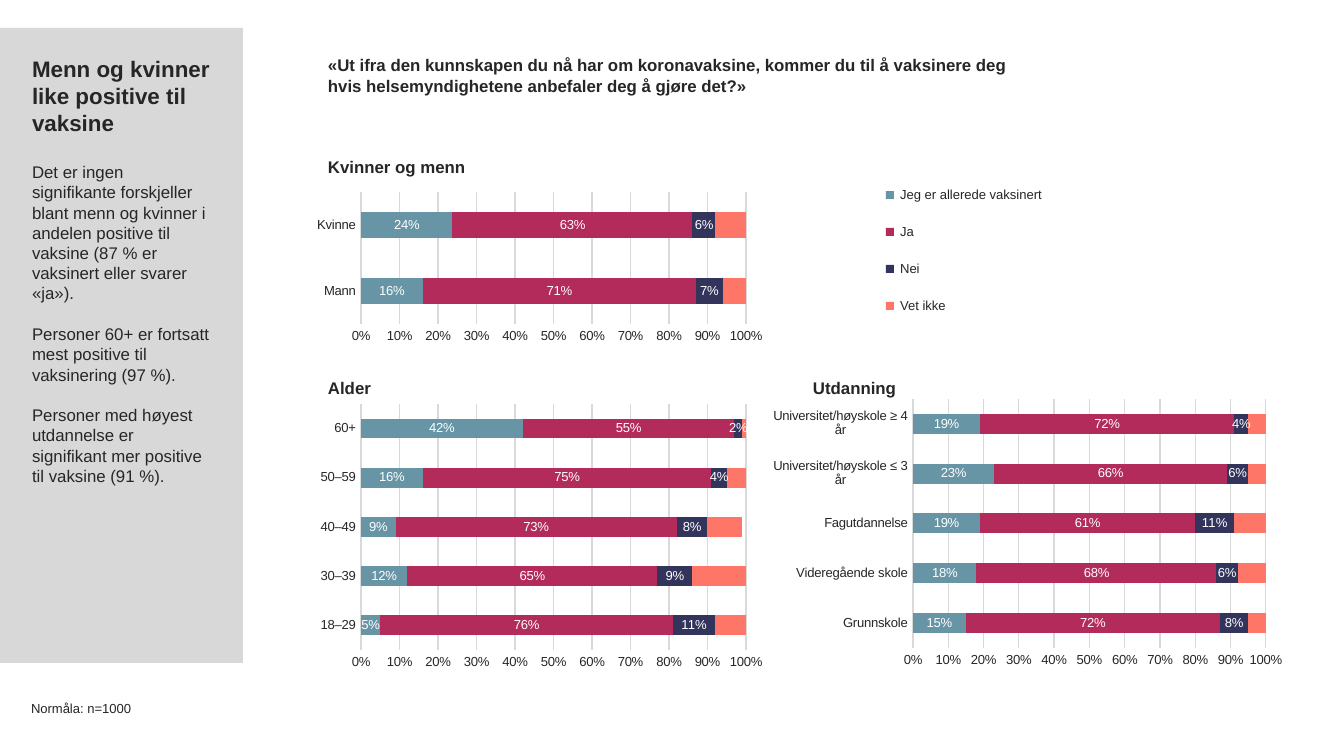
from lxml import etree
from pptx import Presentation
from pptx import util as u
from pptx.chart import data as cd
from pptx.dml import color
from pptx.enum import chart as ch
from pptx.enum import shapes, text
from pptx.oxml import parse_xml
from pptx.oxml import ns

PX = 914400 / 134.4
INK = color.RGBColor(0x26, 0x26, 0x26)
WHITE = color.RGBColor(0xFF, 0xFF, 0xFF)
GRID = color.RGBColor(0xD9, 0xD9, 0xD9)
PANEL = color.RGBColor(0xBE, 0xBF, 0xC0)
BLUE = color.RGBColor(0x67, 0x95, 0xA6)
RED = color.RGBColor(0xB2, 0x2B, 0x5A)
NAVY = color.RGBColor(0x32, 0x34, 0x5C)
CORAL = color.RGBColor(0xFE, 0x76, 0x68)


def px(*nums):
    return [u.Emu(round(n * PX)) for n in nums]


def style(font, size, tint=INK, bold=False):
    font.name = "Arial"
    font.size = u.Pt(size)
    font.bold = bold
    font.color.rgb = tint


prs = Presentation()
prs.slide_width, prs.slide_height = px(1344, 756)
slide = prs.slides.add_slide(prs.slide_layouts[1])
title = slide.shapes.title
note = slide.placeholders[1]

panel = slide.shapes.add_shape(shapes.MSO_SHAPE.RECTANGLE, *px(0, 28, 243, 635))
panel.shadow.inherit = False
panel.line.fill.background()
panel.fill.solid()
panel.fill.fore_color.rgb = PANEL
tone = panel.element.spPr.find(ns.qn("a:solidFill"))[0]
etree.SubElement(tone, ns.qn("a:alpha"), val="60000")
title.element.addprevious(panel.element)

story = [
    "Menn og kvinner like positive til vaksine",
    "Det er ingen signifikante forskjeller blant menn og kvinner i andelen positive til vaksine "
    "(87 % er vaksinert eller svarer «ja»).",
    "Personer 60+ er fortsatt mest positive til vaksinering (97 %).",
    "Personer med høyest utdannelse er signifikant mer positive til vaksine (91 %).",
]
for box, area, lines in [
    (title, (32, 55, 180, 566), story),
    (note, (31, 700, 212, 32), ["Normåla: n=1000"]),
]:
    box.left, box.top, box.width, box.height = px(*area)
    frame = box.text_frame
    frame.margin_left = frame.margin_right = frame.margin_top = frame.margin_bottom = 0
    frame.word_wrap = True
    frame.auto_size = text.MSO_AUTO_SIZE.NONE
    frame.vertical_anchor = text.MSO_ANCHOR.TOP
    frame.text = "\n".join(lines)
    for i, para in enumerate(frame.paragraphs):
        para.alignment = text.PP_ALIGN.LEFT
        para.space_before = u.Pt([0, 14, 11, 11][i])
        head = box is title and i == 0
        size = 12 if head else 9 if box is title else 7
        for run in para.runs:
            style(run.font, size, bold=head)

props = note.text_frame.paragraphs[0]._p.get_or_add_pPr()
props.set("marL", "0")
props.set("indent", "0")
etree.SubElement(props, ns.qn("a:buNone"))

heads = [
    ("«Ut ifra den kunnskapen du nå har om koronavaksine, kommer du til å vaksinere deg "
     "hvis helsemyndighetene anbefaler deg å gjøre det?»", 328, 55, 688),
    ("Kvinner og menn", 328, 157, 180),
    ("Alder", 328, 378, 180),
    ("Utdanning", 813, 378, 180),
]
for words, x, y, w in heads:
    frame = slide.shapes.add_textbox(*px(x, y, w, 48)).text_frame
    frame.margin_left = frame.margin_right = frame.margin_top = frame.margin_bottom = 0
    frame.word_wrap = True
    frame.text = words
    style(frame.paragraphs[0].runs[0].font, 9, bold=True)

tints = [BLUE, RED, NAVY, CORAL]
kinds = ch.XL_CHART_TYPE
charts = [
    (kinds.BAR_STACKED_100, (308, 188, 464, 157), (361, 192, 385, 132),
     ["Mann", "Kvinne"],
     [(0.16, 0.24), (0.71, 0.63), (0.07, 0.06), (0.06, 0.08)]),
    (kinds.BAR_STACKED, (312, 398, 461, 276), (361, 404, 385, 246),
     ["18–29", "30–39", "40–49", "50–59", "60+"],
     [(0.05, 0.12, 0.09, 0.16, 0.42), (0.76, 0.65, 0.73, 0.75, 0.55),
      (0.11, 0.09, 0.08, 0.04, 0.02), (0.09, 0.14, 0.09, 0.05, 0.02)]),
    (kinds.BAR_STACKED, (773, 394, 520, 281), (913, 399, 353, 249),
     ["Grunnskole", "Videregående skole", "Fagutdannelse",
      "Universitet/høyskole ≤ 3 år", "Universitet/høyskole ≥ 4 år"],
     [(0.15, 0.18, 0.19, 0.23, 0.19), (0.72, 0.68, 0.61, 0.66, 0.72),
      (0.08, 0.06, 0.11, 0.06, 0.04), (0.06, 0.09, 0.09, 0.06, 0.06)]),
]
for kind, area, inner, groups, rows in charts:
    data = cd.CategoryChartData(number_format="0%")
    data.categories = groups
    for i, row in enumerate(rows, 1):
        data.add_series(f"Series {i}", row)
    chart = slide.shapes.add_chart(kind, *px(*area), data).chart
    chart.has_legend = False
    chart.has_title = False
    style(chart.font, 7)

    for axis in (chart.category_axis, chart.value_axis):
        axis.major_tick_mark = axis.minor_tick_mark = ch.XL_TICK_MARK.NONE
        style(axis.tick_labels.font, 7)
    scale = chart.value_axis
    scale.minimum_scale, scale.maximum_scale, scale.major_unit = 0, 1, 0.1
    scale.tick_labels.number_format = "0%"
    scale.tick_labels.number_format_is_linked = False
    scale.format.line.fill.background()
    for line in (chart.category_axis.format.line, scale.major_gridlines.format.line):
        line.color.rgb = GRID
        line.width = u.Pt(0.75)

    plot = chart.plots[0]
    plot.gap_width = 150
    plot.overlap = 100
    plot.vary_by_categories = False
    for part, tint in zip(plot.series, tints):
        part.format.fill.solid()
        part.format.fill.fore_color.rgb = tint
        if tint != CORAL:
            tags = part.data_labels
            tags.show_value = True
            tags.number_format = "0%"
            tags.number_format_is_linked = False
            style(tags.font, 7, WHITE)

    x, y, w, h = area
    left, top, wide, high = inner
    spots = {"x": (left - x) / w, "y": (top - y) / h, "w": wide / w, "h": high / h}
    modes = "".join(f'<c:{k}Mode val="edge"/>' for k in "xy")
    sizes = "".join(f'<c:{k} val="{v:.4f}"/>' for k, v in spots.items())
    grid = chart._chartSpace.chart.plotArea
    for old in grid.findall(ns.qn("c:layout")):
        grid.remove(old)
    grid.insert(0, parse_xml(
        f'<c:layout {ns.nsdecls("c")}><c:manualLayout><c:layoutTarget val="inner"/>'
        f'{modes}{sizes}</c:manualLayout></c:layout>'))

names = [("Jeg er allerede vaksinert", 171), ("Ja", 42), ("Nei", 47), ("Vet ikke", 74)]
for i, ((name, wide), tint) in enumerate(zip(names, tints)):
    y = 191 + 37 * i
    mark = slide.shapes.add_shape(shapes.MSO_SHAPE.RECTANGLE, *px(886, y, 8, 8))
    mark.shadow.inherit = False
    mark.fill.solid()
    mark.fill.fore_color.rgb = tint
    mark.line.fill.background()
    frame = slide.shapes.add_textbox(*px(887, y - 11, wide, 30)).text_frame
    frame.word_wrap = False
    frame.auto_size = text.MSO_AUTO_SIZE.SHAPE_TO_FIT_TEXT
    frame.text = name
    style(frame.paragraphs[0].runs[0].font, 7)

prs.save("out.pptx")
